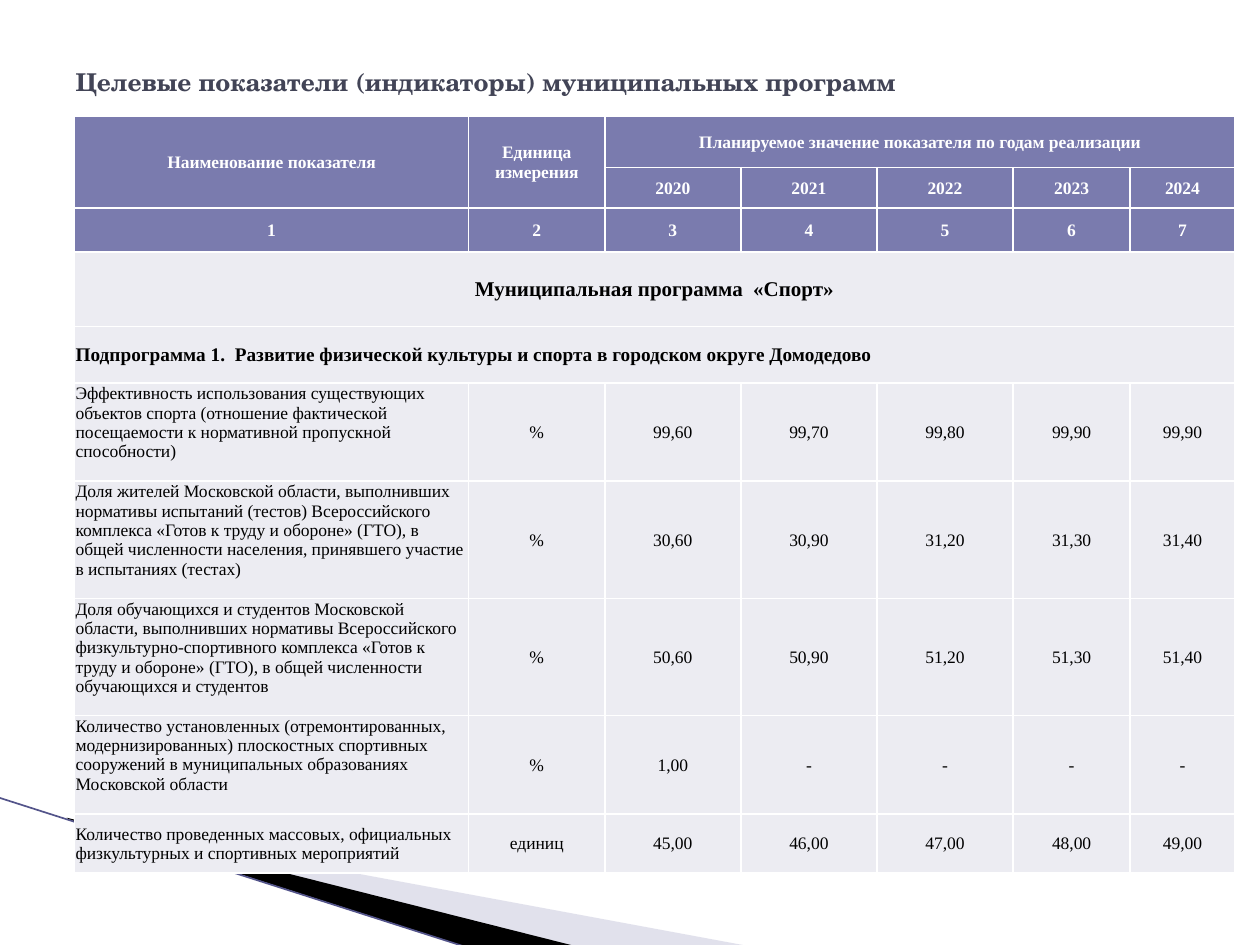
from lxml import etree
from pptx import Presentation
from pptx.dml.color import RGBColor
from pptx.enum.shapes import MSO_CONNECTOR
from pptx.enum.text import MSO_ANCHOR, PP_ALIGN
from pptx.oxml.ns import qn
from pptx.util import Inches, Pt

LEFT, CENTER = PP_ALIGN.LEFT, PP_ALIGN.CENTER
TOP, MIDDLE = MSO_ANCHOR.TOP, MSO_ANCHOR.MIDDLE
STRAIGHT = MSO_CONNECTOR.STRAIGHT

SERIF = "Times New Roman"
WHITE, BLACK = "FFFFFF", "000000"
HEAD, BODY = "7A7BAE", "ECECF2"

COLS = [3.13, 1.08, 1.08, 1.08, 1.08, 0.93, 0.83]
ROWS = [0.41, 0.32, 0.35, 0.59, 0.45, 0.78, 0.93, 0.93, 0.78, 0.47]

HEADER = [
    ["Наименование показателя", "Единица измерения",
     "Планируемое значение показателя по годам реализации", "", "", "", ""],
    ["", "", "2020", "2021", "2022", "2023", "2024"],
    ["1", "2", "3", "4", "5", "6", "7"],
]
PROGRAM = "Муниципальная программа  «Спорт»"
SUBPROGRAM = ("Подпрограмма 1.  Развитие физической культуры и спорта "
              "в городском округе Домодедово")
GOALS = [
    ["Эффективность использования существующих объектов спорта (отношение "
     "фактической посещаемости к нормативной пропускной способности)",
     "%", "99,60", "99,70", "99,80", "99,90", "99,90"],
    ["Доля жителей Московской области, выполнивших нормативы испытаний "
     "(тестов) Всероссийского комплекса «Готов к труду и обороне» (ГТО), в "
     "общей численности населения, принявшего участие в испытаниях (тестах)",
     "%", "30,60", "30,90", "31,20", "31,30", "31,40"],
    ["Доля обучающихся и студентов Московской области, выполнивших нормативы "
     "Всероссийского физкультурно-спортивного комплекса «Готов к труду и "
     "обороне» (ГТО), в общей численности обучающихся и студентов",
     "%", "50,60", "50,90", "51,20", "51,30", "51,40"],
    ["Количество установленных (отремонтированных, модернизированных) "
     "плоскостных спортивных сооружений в муниципальных образованиях "
     "Московской области",
     "%", "1,00", "-", "-", "-", "-"],
    ["Количество проведенных массовых, официальных физкультурных и "
     "спортивных мероприятий",
     "единиц", "45,00", "46,00", "47,00", "48,00", "49,00"],
]


def rgb(code):
    return RGBColor.from_string(code)


def style(frame, text, font, size, color, bold, align):
    frame.text = text
    para = frame.paragraphs[0]
    para.alignment = align
    for run in para.runs:
        run.font.name = font
        run.font.size = Pt(size)
        run.font.bold = bold
        run.font.color.rgb = rgb(color)


def add_wedge(slide, points, color, alpha=None):
    spots = [(Inches(x), Inches(y)) for x, y in points]
    pen = slide.shapes.build_freeform(*spots[0])
    pen.add_line_segments(spots[1:], close=True)
    wedge = pen.convert_to_shape()
    wedge.shadow.inherit = False
    wedge.line.fill.background()
    wedge.fill.solid()
    wedge.fill.fore_color.rgb = rgb(color)
    if alpha is not None:
        tint = wedge.fill._xPr.find(".//" + qn("a:srgbClr"))
        etree.SubElement(tint, qn("a:alpha"), val=str(alpha * 1000))


def add_line(slide, start, end, color, width):
    ends = [Inches(v) for v in (*start, *end)]
    line = slide.shapes.add_connector(STRAIGHT, *ends)
    line.line.color.rgb = rgb(color)
    line.line.width = Pt(width)
    etree.SubElement(line._element.spPr, qn("a:effectLst"))


def set_title(slide, text):
    title = slide.shapes.title
    title.left, title.top = Inches(0.5), Inches(0.3)
    title.width, title.height = Inches(9), Inches(0.69)
    title.text_frame.vertical_anchor = MIDDLE
    style(title.text_frame, text, "TeX Gyre Schola", 14, "424456", True, LEFT)


def set_border(cell, color, width):
    props = cell._tc.get_or_add_tcPr()
    for side in ("lnL", "lnR", "lnT", "lnB"):
        edge = etree.SubElement(props, qn("a:" + side), w=str(Pt(width)))
        fill = etree.SubElement(edge, qn("a:solidFill"))
        etree.SubElement(fill, qn("a:srgbClr"), val=color)


def fill_cell(cell, text, fill, color=BLACK, size=10, bold=False,
              align=CENTER, anchor=MIDDLE):
    set_border(cell, WHITE, 1)
    cell.fill.solid()
    cell.fill.fore_color.rgb = rgb(fill)
    cell.margin_left = cell.margin_right = cell.margin_top = Inches(0.01)
    cell.margin_bottom = 0
    cell.vertical_anchor = anchor
    style(cell.text_frame, text, SERIF, size, color, bold, align)


def add_grid(slide):
    frame = slide.shapes.add_table(
        len(ROWS), len(COLS), Inches(0.59), Inches(0.92),
        Inches(sum(COLS)), Inches(sum(ROWS)))
    table = frame.table
    for col, width in zip(table.columns, COLS):
        col.width = Inches(width)
    for row, height in zip(table.rows, ROWS):
        row.height = Inches(height)

    # Header rows
    for r, texts in enumerate(HEADER):
        for c, text in enumerate(texts):
            fill_cell(table.cell(r, c), text, HEAD, WHITE, bold=True)

    # Full-width section rows
    bands = [(PROGRAM, 12, CENTER), (SUBPROGRAM, 11, LEFT)]
    for r, (text, size, align) in enumerate(bands, len(HEADER)):
        for c in range(len(COLS)):
            fill_cell(table.cell(r, c), "" if c else text, BODY,
                      size=size, bold=True, align=align)

    # Indicator rows: long names start at the top of the cell
    for r, texts in enumerate(GOALS, len(HEADER) + len(bands)):
        for c, text in enumerate(texts):
            top = c == 0 and r < len(ROWS) - 1
            fill_cell(table.cell(r, c), text, BODY,
                      align=CENTER if c else LEFT,
                      anchor=TOP if top else MIDDLE)

    # Merged cells
    for r1, c1, r2, c2 in [(0, 0, 1, 0), (0, 1, 1, 1), (0, 2, 0, 6),
                           (3, 0, 3, 6), (4, 0, 4, 6)]:
        table.cell(r1, c1).merge(table.cell(r2, c2))


def main():
    deck = Presentation()
    deck.slide_width, deck.slide_height = Inches(10), Inches(7.5)
    slide = deck.slides.add_slide(deck.slide_layouts[5])

    # Corner decoration
    add_wedge(slide, [(0.55, 6.51), (5.95, 7.51), (4.56, 7.51), (0.55, 6.5)],
              "B6B6D1", 40)
    add_wedge(slide, [(0.53, 6.49), (4.57, 7.51), (3.72, 7.52), (0.54, 6.5)],
              BLACK)
    add_line(slide, (-0.01, 6.33), (3.71, 7.52), "53548A", 0.95)

    # Title and table
    set_title(slide, "Целевые показатели (индикаторы) муниципальных программ")
    add_grid(slide)
    deck.save("out.pptx")


if __name__ == "__main__":
    main()
